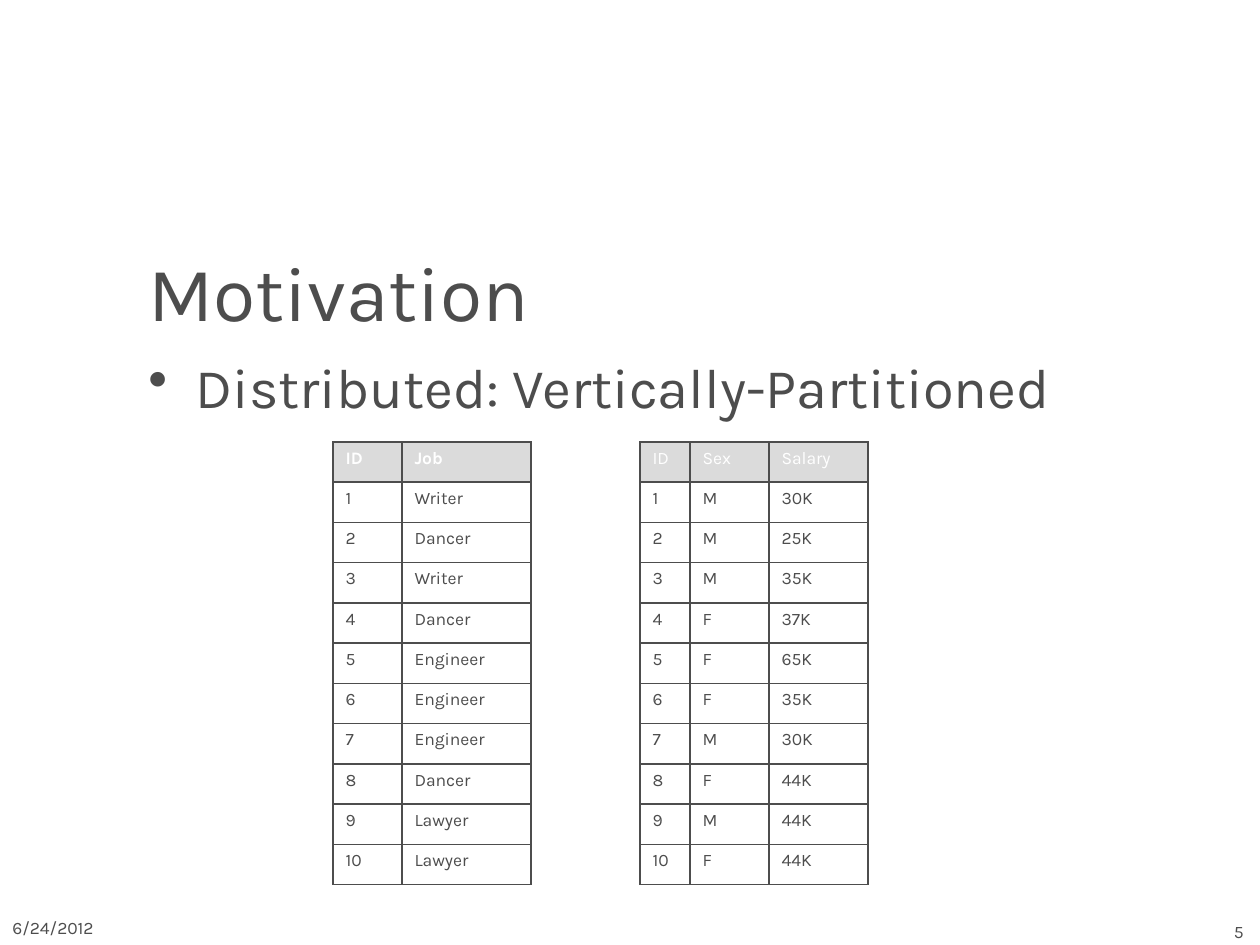
from pptx import Presentation
from pptx import util as u
from pptx.dml.color import RGBColor
from pptx.enum import text as t
from pptx.oxml import parse_xml
from pptx.oxml.ns import nsdecls

# Content
TITLE = "Motivation"
POINT = "Distributed: Vertically-Partitioned"
DATE, PAGE = "6/24/2012", "5"
JOBS = ["Writer", "Dancer", "Writer", "Dancer", "Engineer",
        "Engineer", "Engineer", "Dancer", "Lawyer", "Lawyer"]
SEXES = "MMMFFFMFMF"
PAY = [30, 25, 35, 37, 65, 35, 30, 44, 44, 44]
TABLES = [
    {"left": 333, "cols": [69, 129], "bold": True, "head": ["ID", "Job"],
     "rows": [(str(i), job) for i, job in enumerate(JOBS, 1)]},
    {"left": 640, "cols": [50, 79, 99], "bold": False,
     "head": ["ID", "Sex", "Salary"],
     "rows": [(str(i), sex, f"{pay}K")
              for i, (sex, pay) in enumerate(zip(SEXES, PAY), 1)]},
]
TOP, HIGH = 442, 443

THEME = {"font": "Karla", "ink": "4D4D4D", "head": "DBDBDB", "paper": "FFFFFF",
         "title": 44, "body": 32, "small": 10}


def px(n):
    return u.Emu(round(n * 914400 / 126))


def color(name):
    return RGBColor.from_string(THEME[name])


def add_run(para, words, size, ink="ink", bold=False):
    run = para.add_run()
    run.text = words
    font = run.font
    font.name, font.size, font.bold = THEME["font"], u.Pt(THEME[size]), bold
    font.color.rgb = color(ink)


def add_text(slide, box, words, size, anchor=t.MSO_ANCHOR.TOP,
             align=t.PP_ALIGN.LEFT, bullet=False):
    frame = slide.shapes.add_textbox(*map(px, box)).text_frame
    frame.word_wrap = True
    frame.vertical_anchor = anchor
    para = frame.paragraphs[0]
    para.alignment = align
    if bullet:
        props = para._p.get_or_add_pPr()
        props.set("marL", str(px(47)))
        props.set("indent", str(-px(47)))
        props.append(parse_xml(f'<a:buChar {nsdecls("a")} char="•"/>'))
    add_run(para, words, size)


def add_borders(cell):
    props = cell._tc.get_or_add_tcPr()
    for i, side in enumerate(("lnL", "lnR", "lnT", "lnB")):
        props.insert(i, parse_xml(
            f'<a:{side} {nsdecls("a")} w="{u.Pt(1)}"><a:solidFill>'
            f'<a:srgbClr val="{THEME["ink"]}"/></a:solidFill></a:{side}>'))


def add_grid(slide, data):
    lines = [data["head"], *data["rows"]]
    cols = data["cols"]
    box = data["left"], TOP, sum(cols), HIGH
    table = slide.shapes.add_table(len(lines), len(cols), *map(px, box)).table
    for col, width in zip(table.columns, cols):
        col.width = px(width)
    for r, line in enumerate(lines):
        head = r == 0
        for c, words in enumerate(line):
            cell = table.cell(r, c)
            cell.fill.solid()
            cell.fill.fore_color.rgb = color("head" if head else "paper")
            add_borders(cell)
            add_run(cell.text_frame.paragraphs[0], words, "small",
                    "paper" if head else "ink", head and data["bold"])


def main():
    deck = Presentation()
    deck.slide_width, deck.slide_height = px(1260), px(945)
    slide = deck.slides.add_slide(deck.slide_layouts[6])

    # Footer
    add_text(slide, (1177, 915, 79, 34), PAGE, "small", align=t.PP_ALIGN.RIGHT)
    add_text(slide, (0, 911, 134, 34), DATE, "small")

    # Heading and bullet
    add_text(slide, (136, 242, 1008, 98), TITLE, "title", t.MSO_ANCHOR.MIDDLE)
    add_text(slide, (136, 346, 1008, 588), POINT, "body", bullet=True)

    # Partitioned tables
    for data in TABLES:
        add_grid(slide, data)

    deck.save("out.pptx")


if __name__ == "__main__":
    main()
